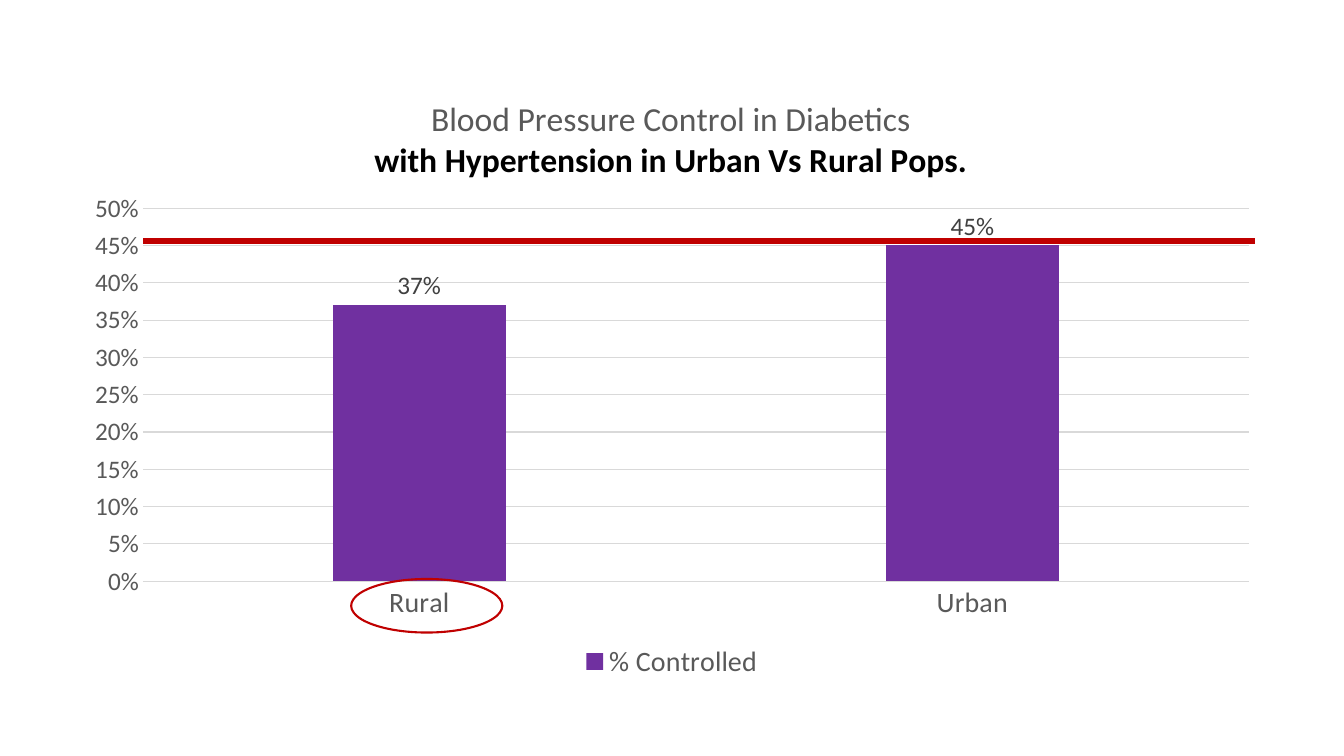
import pptx
import pptx.chart.data
import pptx.dml.color
import pptx.enum.chart
import pptx.enum.shapes
import pptx.oxml
import pptx.oxml.ns
import pptx.util
from pptx.util import Cm

COLORS = {"bar": "7030A0", "accent": "C00000", "grid": "D9D9D9",
          "axis": "595959", "label": "404040", "black": "000000"}
FONT = "Calibri"


def rgb(name):
    return pptx.dml.color.RGBColor.from_string(COLORS[name])


def style_font(font, size, color, bold=False):
    font.name, font.size, font.bold = FONT, pptx.util.Pt(size), bold
    font.color.rgb = rgb(color)


def style_line(line, color, width):
    line.color.rgb = rgb(color)
    line.width = pptx.util.Pt(width)


def write(p, text, size=24, color="axis", bold=False):
    r = p.add_run()
    r.text = text
    style_font(r.font, size, color, bold)


def manual_layout(inner=False, **fractions):
    """Chart layout whose x, y, w and h are fractions of the chart frame."""
    target = '<c:layoutTarget val="inner"/>' if inner else ""
    modes = "".join(f'<c:{k}Mode val="edge"/>' for k in "xy")
    sizes = "".join(f'<c:{k} val="{v}"/>' for k, v in fractions.items())
    return pptx.oxml.parse_xml(
        f'<c:layout {pptx.oxml.ns.nsdecls("c")}><c:manualLayout>'
        f'{target}{modes}{sizes}</c:manualLayout></c:layout>')


def set_layout(element, layout, index):
    for old in element.findall(pptx.oxml.ns.qn("c:layout")):
        element.remove(old)
    element.insert(index, layout)


def add_control_chart(s, left, top, width, height):
    data = pptx.chart.data.CategoryChartData(number_format="0%")
    data.categories = ["Rural", "Urban"]
    data.add_series("% Controlled", [0.37, 0.45])
    kind = pptx.enum.chart.XL_CHART_TYPE.COLUMN_CLUSTERED
    chart = s.shapes.add_chart(kind, Cm(left), Cm(top), Cm(width),
                               Cm(height), data).chart
    style_font(chart.font, 18, "black")

    # Title
    chart.has_title = True
    tf = chart.chart_title.text_frame
    write(tf.paragraphs[0], "Blood Pressure Control in Diabetics")
    write(tf.add_paragraph(), "with Hypertension in Urban Vs Rural Pops.",
          color="black", bold=True)
    chart.chart_title.include_in_layout = False
    set_layout(chart.chart_title._element, manual_layout(x=0.25, y=0.04), 1)

    # Axes
    none = pptx.enum.chart.XL_TICK_MARK.NONE
    for axis, size in ((chart.category_axis, 20), (chart.value_axis, 18)):
        axis.major_tick_mark = axis.minor_tick_mark = none
        style_font(axis.tick_labels.font, size, "axis")
    style_line(chart.category_axis.format.line, "grid", 0.75)
    values = chart.value_axis
    values.minimum_scale, values.maximum_scale, values.major_unit = 0, 0.5, 0.05
    values.format.line.fill.background()
    style_line(values.major_gridlines.format.line, "grid", 0.75)
    values.tick_labels.number_format = "0%"
    values.tick_labels.number_format_is_linked = False

    # Bars and labels
    plot = chart.plots[0]
    plot.gap_width, plot.overlap, plot.vary_by_categories = 219, -27, False
    series = plot.series[0]
    series.format.fill.solid()
    series.format.fill.fore_color.rgb = rgb("bar")
    labels = series.data_labels
    labels.show_value = True
    labels.position = pptx.enum.chart.XL_LABEL_POSITION.OUTSIDE_END
    labels.number_format, labels.number_format_is_linked = "0%", False
    style_font(labels.font, 18, "label")
    set_layout(chart._chartSpace.chart.plotArea,
               manual_layout(inner=True, x=0.06, y=0.224, w=0.92, h=0.608), 0)

    # Legend
    chart.has_legend = True
    chart.legend.position = pptx.enum.chart.XL_LEGEND_POSITION.BOTTOM
    chart.legend.include_in_layout = False
    style_font(chart.legend.font, 20, "axis")


def add_highlights(s, left, top):
    # Reference line at the urban level
    y = Cm(top + 4.29)
    line = s.shapes.add_connector(pptx.enum.shapes.MSO_CONNECTOR.STRAIGHT,
                                  Cm(left + 1.83), y, Cm(left + 29.84), y)
    style_line(line.line, "accent", 4.5)
    line._element.spPr.append(pptx.oxml.parse_xml(
        f'<a:effectLst {pptx.oxml.ns.nsdecls("a")}/>'))

    # Ring around the rural category
    ring = s.shapes.add_shape(pptx.enum.shapes.MSO_SHAPE.OVAL, Cm(left + 7.07),
                              Cm(top + 12.81), Cm(3.81), Cm(1.35))
    ring.shadow.inherit = False
    ring.fill.background()
    style_line(ring.line, "accent", 1.5)


def main():
    prs = pptx.Presentation()
    prs.slide_width, prs.slide_height = Cm(33.87), Cm(19.05)
    s = prs.slides.add_slide(prs.slide_layouts[6])
    left, top, width, height = 1.78, 1.78, 30.3, 15.47
    add_control_chart(s, left, top, width, height)
    add_highlights(s, left, top)
    prs.save("out.pptx")


if __name__ == "__main__":
    main()
